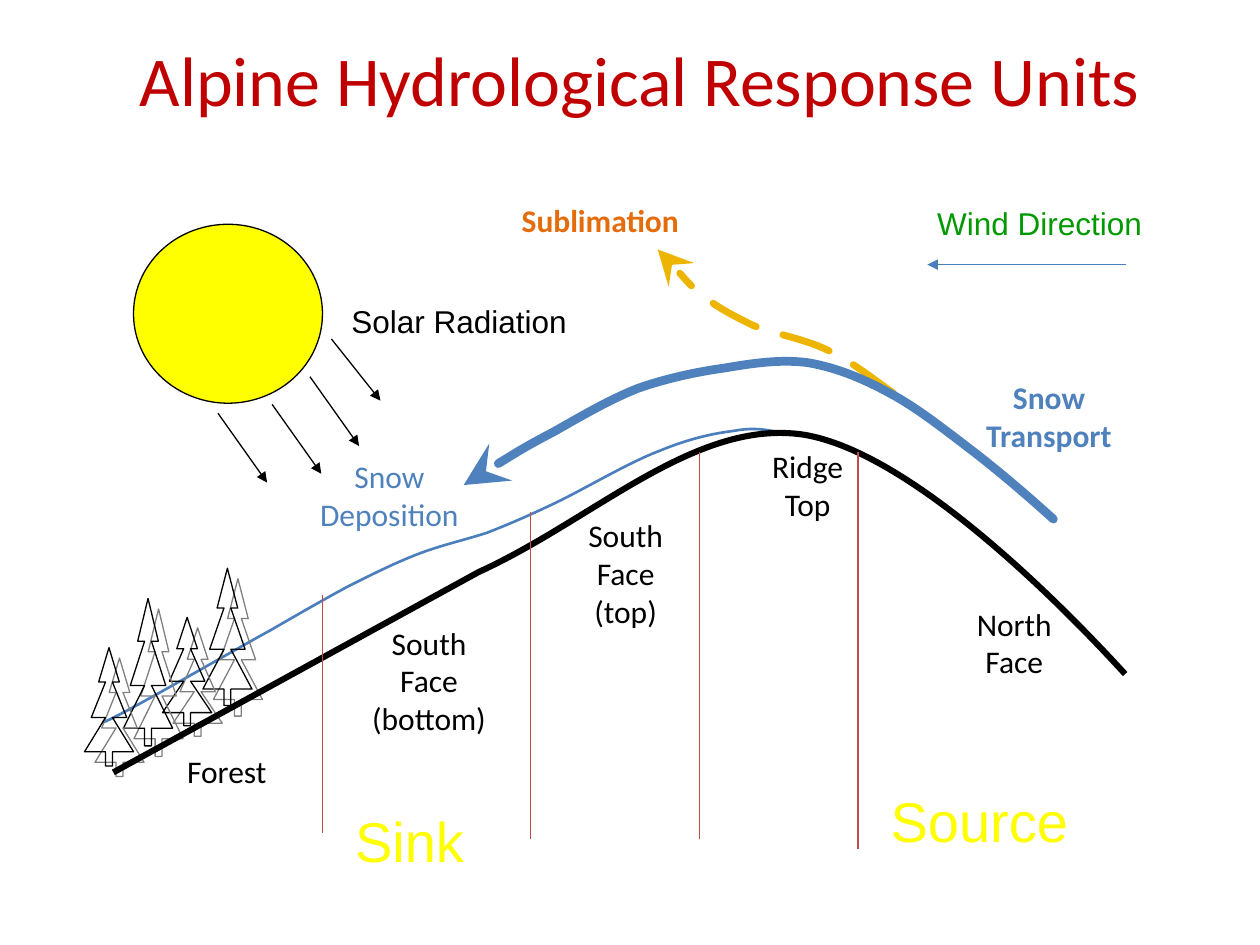
from lxml import etree
from pptx import Presentation
from pptx.dml.color import RGBColor
from pptx.enum.dml import MSO_LINE
from pptx.enum.shapes import MSO_CONNECTOR, MSO_SHAPE
from pptx.enum.text import MSO_ANCHOR, MSO_AUTO_SIZE, PP_ALIGN
from pptx.oxml.ns import qn
from pptx.util import Inches, Pt

STRAIGHT = MSO_CONNECTOR.STRAIGHT
OVAL = MSO_SHAPE.OVAL
LONG_DASH = MSO_LINE.LONG_DASH
MIDDLE = MSO_ANCHOR.MIDDLE
GROW = MSO_AUTO_SIZE.SHAPE_TO_FIT_TEXT
LEFT, CENTER = PP_ALIGN.LEFT, PP_ALIGN.CENTER

COLUMNS, ROWS = 10, 7.5
BLACK, BLUE, THIN_BLUE, YELLOW = "000000", "4F81BD", "4B7EBC", "FFFF00"
RED, DIVIDER, ORANGE, GOLD, GREEN = "C00000", "BF4C48", "E46C0A", "EEB500", "009900"

SNOWPACK = [
    (6.18, 3.43), (6.08, 3.41), (5.98, 3.39), (5.82, 3.42), (5.66, 3.44), (5.47, 3.48),
    (5.23, 3.58), (4.99, 3.67), (4.64, 3.88), (4.41, 3.99), (4.18, 4.1), (4.04, 4.16),
    (3.86, 4.23), (3.67, 4.29), (3.49, 4.33), (3.31, 4.4), (3.13, 4.47), (2.97, 4.55),
    (2.77, 4.65), (2.58, 4.75), (2.15, 5), (2.15, 5), (1.82, 5.18), (0.79, 5.78), (0.81, 5.73),
]
GROUND = [
    (0.9, 6.13), (0.9, 6.13), (3.8, 4.54), (3.8, 4.54), (4.72, 4.12), (5.52, 3.32),
    (6.38, 3.45), (7.23, 3.59), (8.42, 4.79), (8.93, 5.35),
]
SUBLIMATION = [
    (7.09, 3.12), (6.92, 3), (6.76, 2.87), (6.57, 2.78), (6.39, 2.69), (6.14, 2.65),
    (5.97, 2.58), (5.81, 2.5), (5.71, 2.45), (5.58, 2.35), (5.46, 2.25), (5.29, 2.05), (5.22, 1.98),
]
TRANSPORT = [
    (8.36, 4.12), (8.15, 3.93), (7.94, 3.75), (7.72, 3.58), (7.51, 3.42), (7.27, 3.23),
    (7.06, 3.12), (6.84, 3), (6.64, 2.92), (6.42, 2.88), (6.21, 2.85), (5.99, 2.88),
    (5.76, 2.92), (5.54, 2.95), (5.3, 3), (5.07, 3.08), (4.84, 3.17), (4.62, 3.3),
    (4.39, 3.43), (4.16, 3.55), (3.92, 3.7), (3.68, 3.85),
]
HALF_TREE = [
    (0.5, 0), (0.29, 0.29), (0.43, 0.29), (0.14, 0.59),
    (0.43, 0.59), (0, 0.88), (0.43, 0.88), (0.43, 1),
]
TREE = HALF_TREE + [(1 - across, down) for across, down in reversed(HALF_TREE[1:])]
TREE_WIDTH = 0.39


def color(value):
    return RGBColor.from_string(value)


class Sketch:
    def __init__(self, deck, page):
        self.page = page
        self.cell_width = deck.slide_width / COLUMNS
        self.cell_height = deck.slide_height / ROWS

    def place(self, column, row):
        return round(column * self.cell_width), round(row * self.cell_height)

    def stroke(self, shape, hue, width, head=None, size="med"):
        shape.line.color.rgb = color(hue)
        shape.line.width = Pt(width)
        if head:
            outline = shape.element.spPr.find(qn("a:ln"))
            etree.SubElement(outline, qn("a:tailEnd"), type=head, w=size, len=size)

    def set_text(self, frame, text, hue, size, font, bold=False, align=CENTER):
        frame.text = text
        for para in frame.paragraphs:
            para.alignment = align
            for span in para.runs:
                span.font.name = font
                span.font.size = Pt(size)
                span.font.bold = bold
                span.font.color.rgb = color(hue)

    def title(self, text, left, top, width, height):
        box = self.page.shapes.title
        box.left, box.top = self.place(left, top)
        box.width, box.height = self.place(width, height)
        box.text_frame.vertical_anchor = MIDDLE
        self.set_text(box.text_frame, text, RED, 40, "Calibri")

    def text_box(self, left, top, width, height, wrap):
        box = self.page.shapes.add_textbox(*self.place(left, top), *self.place(width, height))
        box.text_frame.word_wrap = wrap
        box.text_frame.auto_size = GROW
        return box.text_frame

    def label(self, text, left, top, width, height, hue=BLACK, bold=False):
        frame = self.text_box(left, top, width, height, True)
        self.set_text(frame, text, hue, 18, "Calibri", bold)

    def caption(self, text, left, top, width, height, hue, size=18):
        frame = self.text_box(left, top, width, height, False)
        self.set_text(frame, text, hue, size, "Arial", align=LEFT)

    def outline(self, points, close):
        start, *others = [self.place(*point) for point in points]
        builder = self.page.shapes.build_freeform(*start)
        builder.add_line_segments(others, close=close)
        shape = builder.convert_to_shape()
        shape.shadow.inherit = False
        shape.fill.background()
        return shape

    def curve(self, points, hue, width, head=None, dash=None, cap="flat"):
        shape = self.outline(points, close=False)
        segments = list(shape.element.iter(qn("a:lnTo")))
        for first in range(0, len(segments), 3):
            bezier = etree.Element(qn("a:cubicBezTo"))
            segments[first].addprevious(bezier)
            for segment in segments[first:first + 3]:
                bezier.append(segment[0])
                segment.getparent().remove(segment)
        if dash:
            shape.line.dash_style = dash
        self.stroke(shape, hue, width, head, "lg")
        shape.element.spPr.find(qn("a:ln")).set("cap", cap)

    def tree(self, left, top, height):
        points = [(left + across * TREE_WIDTH, top + down * height) for across, down in TREE]
        shape = self.outline(points, close=True)
        self.stroke(shape, BLACK, 0.75)
        effects = shape.element.spPr.find(qn("a:effectLst"))
        shadow = etree.SubElement(effects, qn("a:outerShdw"), dist=str(Pt(8.5)),
                                  dir="2700000", algn="ctr", rotWithShape="0")
        etree.SubElement(shadow, qn("a:srgbClr"), val="808080")

    def line(self, start, end, hue, head=None):
        connector = self.page.shapes.add_connector(STRAIGHT, *self.place(*start), *self.place(*end))
        self.stroke(connector, hue, 0.75, head)
        etree.SubElement(connector.element.spPr, qn("a:effectLst"))

    def sun(self, left, top, width, height):
        disc = self.page.shapes.add_shape(OVAL, *self.place(left, top), *self.place(width, height))
        disc.shadow.inherit = False
        disc.fill.solid()
        disc.fill.fore_color.rgb = color(YELLOW)
        self.stroke(disc, BLACK, 0.75)


def main():
    deck = Presentation()
    deck.slide_width, deck.slide_height = Inches(10), Inches(7.5)
    sketch = Sketch(deck, deck.slides.add_slide(deck.slide_layouts[5]))

    sketch.title("Alpine Hydrological Response Units", 0.35, 0, 9.45, 1.25)
    sketch.curve(SNOWPACK, THIN_BLUE, 1.5)
    sketch.label("North Face", 7.54, 4.75, 1.02, 0.7)
    sketch.label("South Face\n(top)", 4.34, 4.05, 1.25, 1)
    sketch.label("South Face (bottom)", 2.78, 4.9, 1.25, 1)
    sketch.label("Forest", 1.29, 5.92, 1.02, 0.4)

    for left, top, height in [(1.61, 4.51, 1.09), (1.29, 4.9, 0.86), (0.98, 4.75, 1.17), (0.67, 5.14, 0.94)]:
        sketch.tree(left, top, height)

    sketch.curve(GROUND, BLACK, 3.5)
    sketch.curve(SUBLIMATION, GOLD, 4, "stealth", LONG_DASH, "rnd")
    sketch.curve(TRANSPORT, BLUE, 5, "stealth", cap="rnd")
    sketch.label("Snow Transport", 7.7, 2.95, 1.25, 0.7, BLUE, True)
    sketch.label("Snow Deposition", 2.39, 3.58, 1.4, 0.7, BLUE)
    sketch.label("Sublimation", 4.03, 1.55, 1.47, 0.4, ORANGE, True)
    sketch.label("Ridge\nTop", 5.9, 3.5, 1.02, 0.7)

    for column, top, bottom in [(6.81, 3.59, 6.74), (5.55, 3.59, 6.66), (4.21, 4.06, 6.66), (2.56, 4.72, 6.61)]:
        sketch.line((column, top), (column, bottom), DIVIDER)

    sketch.sun(1.06, 1.78, 1.5, 1.42)
    for column, row, drop in [(2.46, 2.99, 0.55), (1.73, 3.28, 0.55), (2.16, 3.21, 0.55), (2.63, 2.69, 0.49)]:
        sketch.line((column, row), (column + 0.39, row + drop), BLACK, "triangle")
    sketch.caption("Solar Radiation", 2.69, 2.35, 1.91, 0.4, BLACK)
    sketch.line((8.94, 2.1), (7.36, 2.1), THIN_BLUE, "triangle")
    sketch.caption("Wind Direction", 7.34, 1.57, 1.83, 0.4, GREEN)
    sketch.caption("Source", 6.97, 6.19, 1.61, 0.63, YELLOW, 32)
    sketch.caption("Sink", 2.72, 6.35, 1.07, 0.63, YELLOW, 32)

    deck.save("out.pptx")


if __name__ == "__main__":
    main()
